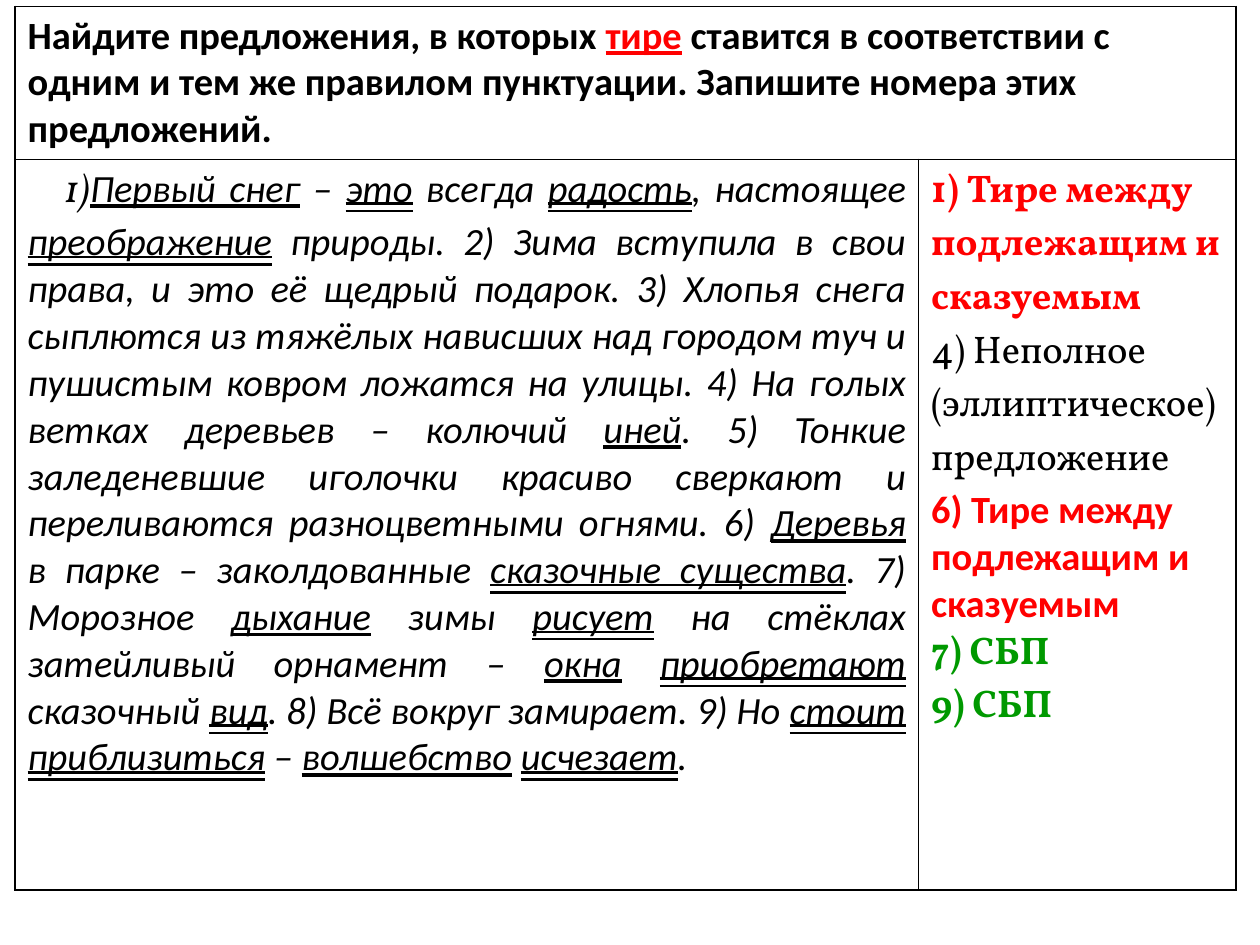
from lxml import etree
from pptx import Presentation
from pptx.dml.color import RGBColor
from pptx.enum import text
from pptx.oxml.ns import qn
from pptx.util import Inches, Pt

THEME = {
    "black": "000000", "red": "FF0000", "green": "009900",
    "sans": "Calibri", "serif": "Vollkorn", "size": 22, "border": 1,
}

COLUMNS = (7.17, 2.52)
ROWS = (0.94, 5.8)
LEFT, TOP = 0.12, 0.05
FIRST_LINE_INDENT = 0.29

# Task: (words, colour, underlined)
TASK = [
    ("Найдите предложения, в которых ", "black", False),
    ("тире", "red", True),
    (" ставится в соответствии с одним и тем же правилом пунктуации. "
     "Запишите номера этих предложений.", "black", False),
]

# Underlining: _subject_ is single, =predicate= is double
NUMBER = "1)"
SENTENCES = (
    "_Первый снег_ – =это= всегда =радость=, настоящее =преображение= природы. "
    "2) Зима вступила в свои права, и это её щедрый подарок. "
    "3) Хлопья снега сыплются из тяжёлых нависших над городом туч "
    "и пушистым ковром ложатся на улицы. "
    "4) На голых ветках деревьев – колючий _иней_. "
    "5) Тонкие заледеневшие иголочки красиво сверкают "
    "и переливаются разноцветными огнями. "
    "6) _Деревья_ в парке – заколдованные =сказочные существа=. "
    "7) Морозное _дыхание_ зимы =рисует= на стёклах затейливый орнамент – "
    "_окна_ =приобретают= сказочный =вид=. "
    "8) Всё вокруг замирает. "
    "9) Но =стоит приблизиться= – _волшебство_ =исчезает=."
)

# Answers: (words, font, colour, bold)
ANSWERS = [
    ("1) Тире между подлежащим и сказуемым", "serif", "red", True),
    ("4) Неполное (эллиптическое) предложение", "serif", "black", False),
    ("6) Тире между подлежащим и сказуемым", "sans", "red", True),
    ("7) СБП", "serif", "green", True),
    ("9) СБП", "serif", "green", True),
]

UNDERLINES = {
    "_": text.MSO_UNDERLINE.SINGLE_LINE,
    "=": text.MSO_UNDERLINE.DOUBLE_LINE,
}


def add_run(p, words, font="sans", color="black", bold=False, italic=False,
            underline=False):
    r = p.add_run()
    r.text = words
    r.font.name = THEME[font]
    r.font.size = Pt(THEME["size"])
    r.font.color.rgb = RGBColor.from_string(THEME[color])
    r.font.bold = bold
    r.font.italic = italic
    r.font.underline = underline


def split_marks(marked):
    """Yield (words, underline) pieces of a marked-up text."""
    words, mark = "", None
    for char in marked:
        if char in UNDERLINES:
            if words:
                yield words, UNDERLINES.get(mark, False)
            words, mark = "", None if mark else char
        else:
            words += char
    if words:
        yield words, False


def style_cell(cell):
    """Give the cell black borders and no fill."""
    tc_pr = cell._tc.get_or_add_tcPr()
    for side in ("a:lnL", "a:lnR", "a:lnT", "a:lnB"):
        line = etree.SubElement(tc_pr, qn(side), w=str(Pt(THEME["border"])))
        fill = etree.SubElement(line, qn("a:solidFill"))
        etree.SubElement(fill, qn("a:srgbClr"), val=THEME["black"])
    cell.fill.background()


def add_grid(slide):
    frame = slide.shapes.add_table(
        len(ROWS), len(COLUMNS), Inches(LEFT), Inches(TOP),
        Inches(sum(COLUMNS)), Inches(sum(ROWS)))
    table = frame.table
    table.first_row = table.horz_banding = False
    for column, width in zip(table.columns, COLUMNS):
        column.width = Inches(width)
    for row, height in zip(table.rows, ROWS):
        row.height = Inches(height)
    for cell in table.iter_cells():
        style_cell(cell)
    table.cell(0, 0).merge(table.cell(0, 1))
    return table


def fill_grid(table):
    p = table.cell(0, 0).text_frame.paragraphs[0]
    for words, color, underline in TASK:
        add_run(p, words, color=color, bold=True, underline=underline)

    p = table.cell(1, 0).text_frame.paragraphs[0]
    p.alignment = text.PP_ALIGN.JUSTIFY
    p._p.get_or_add_pPr().set("indent", str(Inches(FIRST_LINE_INDENT)))
    add_run(p, NUMBER, font="serif", italic=True)
    for words, underline in split_marks(SENTENCES):
        add_run(p, words, italic=True, underline=underline)

    tf = table.cell(1, 1).text_frame
    for i, (words, font, color, bold) in enumerate(ANSWERS):
        p = tf.add_paragraph() if i else tf.paragraphs[0]
        add_run(p, words, font, color, bold)


def main():
    prs = Presentation()
    prs.slide_width, prs.slide_height = Inches(10), Inches(7.5)
    slide = prs.slides.add_slide(prs.slide_layouts[6])
    fill_grid(add_grid(slide))
    prs.save("out.pptx")


if __name__ == "__main__":
    main()
